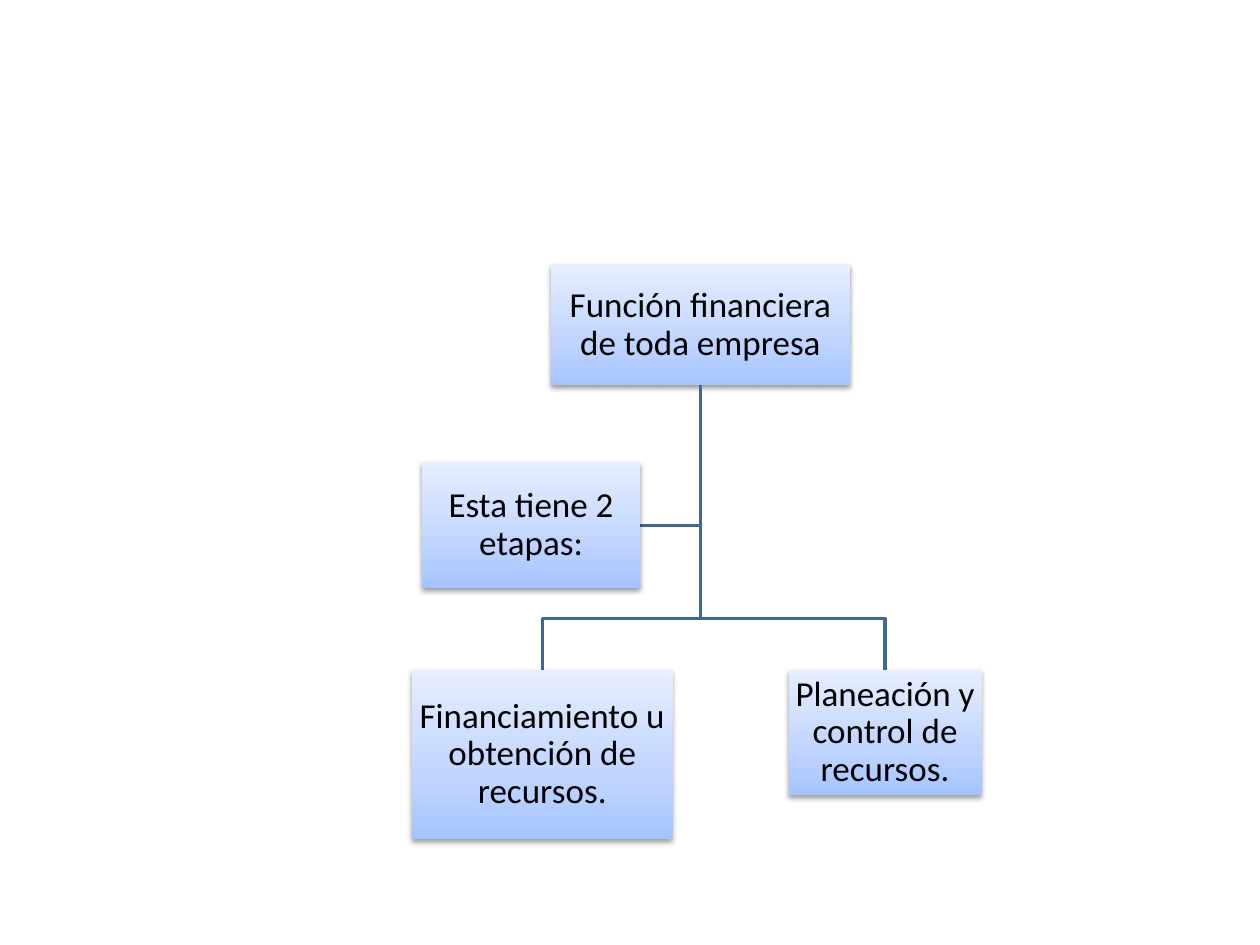
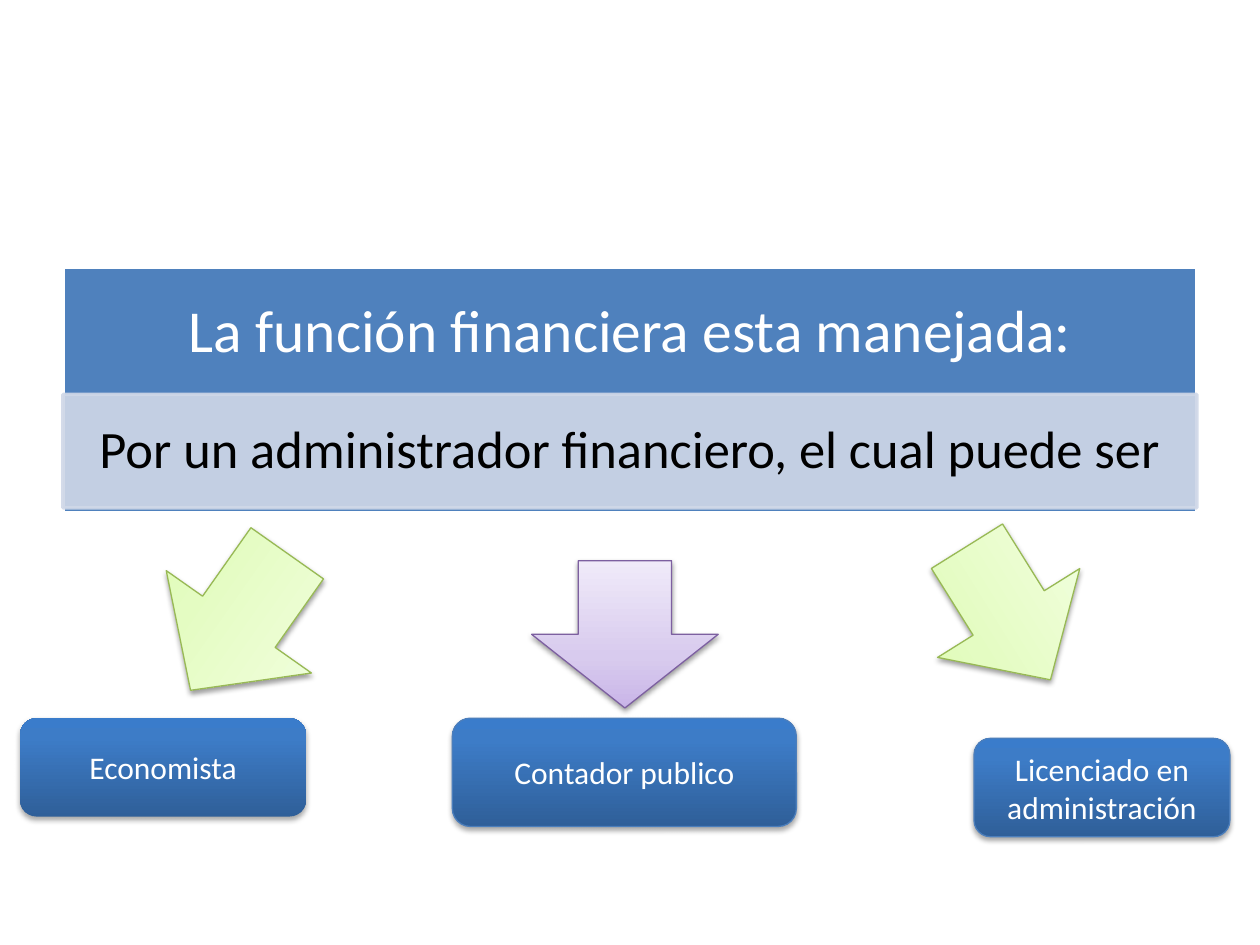
import pptx
import pptx.util
import pptx.dml.color
import pptx.enum.shapes
import pptx.enum.text
import pptx.oxml.ns
from dataclasses import dataclass
from lxml import etree

Pt = pptx.util.Pt
RGB = pptx.dml.color.RGBColor.from_string
SHAPE = pptx.enum.shapes.MSO_SHAPE
qn = pptx.oxml.ns.qn
TITLE_ONLY = 5


@dataclass(frozen=True)
class Theme:
    font: str = "Calibri"
    dark: str = "000000"
    light: str = "FFFFFF"
    connector: str = "3F6797"
    banner: str = "4F81BD"
    strip: str = "D0D8E8"
    card_line: str = "4B7EBC"
    green_line: str = "98B955"
    purple_line: str = "7D60A0"
    # Gradient stops run from the bottom edge to the top edge
    node: tuple = ((0, "A4C4FF"), (35, "BFD4FF"), (100, "E6EEFF"))
    card: tuple = ((0, "2F5F99"), (80, "3D7CC7"), (100, "3A7CCB"))
    green: tuple = ((0, "DAFDA7"), (35, "E4FCC2"), (100, "F5FFE7"))
    purple: tuple = ((0, "C9B5E8"), (35, "D8CBEE"), (100, "F0EAF9"))
    heading_size: float = 34
    strip_size: float = 30
    node_size: float = 20
    card_size: float = 18
    thick: float = 2
    thin: float = 0.75


T = Theme()


# Shared formatting
def color_node(parent, color, alpha=None):
    c = etree.SubElement(parent, qn("a:srgbClr"), val=color)
    if alpha is not None:
        etree.SubElement(c, qn("a:alpha"), val=str(alpha * 1000))


def fill_gradient(s, stops):
    s.fill.gradient()
    s.fill.gradient_angle = 90
    gs_list = s._element.spPr.find(".//" + qn("a:gsLst"))
    for old in list(gs_list):
        gs_list.remove(old)
    for pos, color in stops:
        color_node(etree.SubElement(gs_list, qn("a:gs"), pos=str(pos * 1000)), color)


def set_line(s, color, width):
    if color is None:
        s.line.fill.background()
    else:
        s.line.color.rgb = RGB(color)
        s.line.width = Pt(width)


def drop_shadow(s, alpha=38, distance=1.6):
    s.shadow.inherit = False
    effects = s._element.spPr.find(qn("a:effectLst"))
    shadow = etree.SubElement(effects, qn("a:outerShdw"), blurRad=str(Pt(3.1)),
                              dist=str(Pt(distance)), dir="5400000", rotWithShape="0")
    color_node(shadow, "000000", alpha)


def set_opacity(s, alpha):
    for c in s._element.spPr.iter(qn("a:srgbClr")):
        etree.SubElement(c, qn("a:alpha"), val=str(alpha * 1000))


def move(s, box):
    s.left, s.top, s.width, s.height = (Pt(v) for v in box)


def write(s, text, size, color, insets=(7.2, 3.6, 7.2, 3.6), spacing=1.0):
    tf = s.text_frame
    tf.word_wrap = True
    tf.auto_size = pptx.enum.text.MSO_AUTO_SIZE.NONE
    tf.vertical_anchor = pptx.enum.text.MSO_ANCHOR.MIDDLE
    tf.margin_left, tf.margin_top, tf.margin_right, tf.margin_bottom = map(Pt, insets)
    p = tf.paragraphs[0]
    p.alignment = pptx.enum.text.PP_ALIGN.CENTER
    p.line_spacing = spacing
    r = p.add_run()
    r.text = text
    r.font.name, r.font.size = T.font, Pt(size)
    r.font.color.rgb = RGB(color)


def add_shape(slide, kind, box):
    s = slide.shapes.add_shape(kind, *(Pt(v) for v in box))
    s.shadow.inherit = False
    return s


def offset(box, origin):
    x, y, w, h = box
    return origin[0] + x, origin[1] + y, w, h


# Organisation chart
def style_node(s, text):
    fill_gradient(s, T.node)
    set_line(s, None, 0)
    drop_shadow(s)
    write(s, text, T.node_size, T.dark, insets=(0.9,) * 4, spacing=0.9)


def add_branch(slide, points):
    start, *rest = [(Pt(x), Pt(y)) for x, y in points]
    builder = slide.shapes.build_freeform(*start)
    builder.add_line_segments(rest, close=False)
    s = builder.convert_to_shape()
    s.fill.background()
    set_line(s, T.connector, T.thick)
    s.shadow.inherit = False


def org_chart(slide, origin):
    root = offset((79.2, 0, 171.4, 69.1), origin)
    stages = offset((5.8, 113, 124.6, 72), origin)
    children = [
        (offset((0, 231.8, 149, 96.5), origin), "Financiamiento u obtención de recursos."),
        (offset((215.3, 231.8, 110.2, 71.3), origin), "Planeación y control de recursos."),
    ]
    trunk_x, trunk_y = root[0] + root[2] / 2, root[1] + root[3]
    bus_y = origin[1] + 202.3

    # Branches
    stage_y = stages[1] + stages[3] / 2
    add_branch(slide, [(trunk_x, trunk_y), (trunk_x, stage_y),
                       (stages[0] + stages[2], stage_y)])
    for (x, y, w, h), _ in children:
        mid = x + w / 2
        add_branch(slide, [(trunk_x, trunk_y), (trunk_x, bus_y), (mid, bus_y), (mid, y)])

    # Nodes
    title = slide.shapes.title
    move(title, root)
    style_node(title, "Función financiera de toda empresa")
    for box, text in [*children, (stages, "Esta tiene 2 etapas:")]:
        style_node(add_shape(slide, SHAPE.RECTANGLE, box), text)


# Heading banner with a paler strip across its lower half
def banner(slide, box):
    x, y, w, h = box
    strip_top, strip_height = 72.8, 64.8
    title = slide.shapes.title
    move(title, box)
    title.fill.solid()
    title.fill.fore_color.rgb = RGB(T.banner)
    set_line(title, T.light, T.thick)
    write(title, "La función financiera esta manejada:", T.heading_size, T.light,
          insets=(18.7, 18.7, 18.7, h - 56.9), spacing=0.9)

    strip = add_shape(slide, SHAPE.RECTANGLE, (x, y + strip_top, w, strip_height))
    strip.fill.solid()
    strip.fill.fore_color.rgb = RGB(T.strip)
    set_line(strip, T.strip, T.thick)
    set_opacity(strip, 90)
    write(strip, "Por un administrador financiero, el cual puede ser", T.strip_size,
          T.dark, insets=(16.6, 2.9, 16.6, 2.9), spacing=0.9)


# Arrows leading to the three professions
def professions(slide, origin):
    arrows = [
        (SHAPE.RIGHT_ARROW, (77.1, 2.2, 95.8, 101.5), 125.2, T.green, T.green_line),
        (SHAPE.DOWN_ARROW, (292.3, 18, 106.6, 84.2), 0, T.purple, T.purple_line),
        (SHAPE.RIGHT_ARROW, (519.9, 0, 90, 95.8), 58, T.green, T.green_line),
    ]
    for kind, box, angle, stops, line in arrows:
        s = add_shape(slide, kind, offset(box, origin))
        s.rotation = angle
        fill_gradient(s, stops)
        set_line(s, line, T.thin)
        drop_shadow(s)

    cards = [
        ("Economista", (0, 108, 163.4, 56.2), None),
        ("Contador publico", (247, 108, 196.6, 61.9), T.card_line),
        ("Licenciado en administración", (545.1, 119.5, 146.2, 56.2), T.card_line),
    ]
    for text, box, line in cards:
        s = add_shape(slide, SHAPE.ROUNDED_RECTANGLE, offset(box, origin))
        fill_gradient(s, T.card)
        set_line(s, line, T.thin)
        drop_shadow(s, alpha=35, distance=1.8)
        write(s, text, T.card_size, T.light)


def main():
    prs = pptx.Presentation()
    prs.slide_width, prs.slide_height = Pt(720), Pt(540)
    layout = prs.slide_layouts[TITLE_ONLY]

    org_chart(prs.slides.add_slide(layout), (235.4, 151.2))

    slide = prs.slides.add_slide(layout)
    banner(slide, (36, 152.6, 648, 140.4))
    professions(slide, (11.5, 302.4))

    prs.save("out.pptx")


if __name__ == "__main__":
    main()
